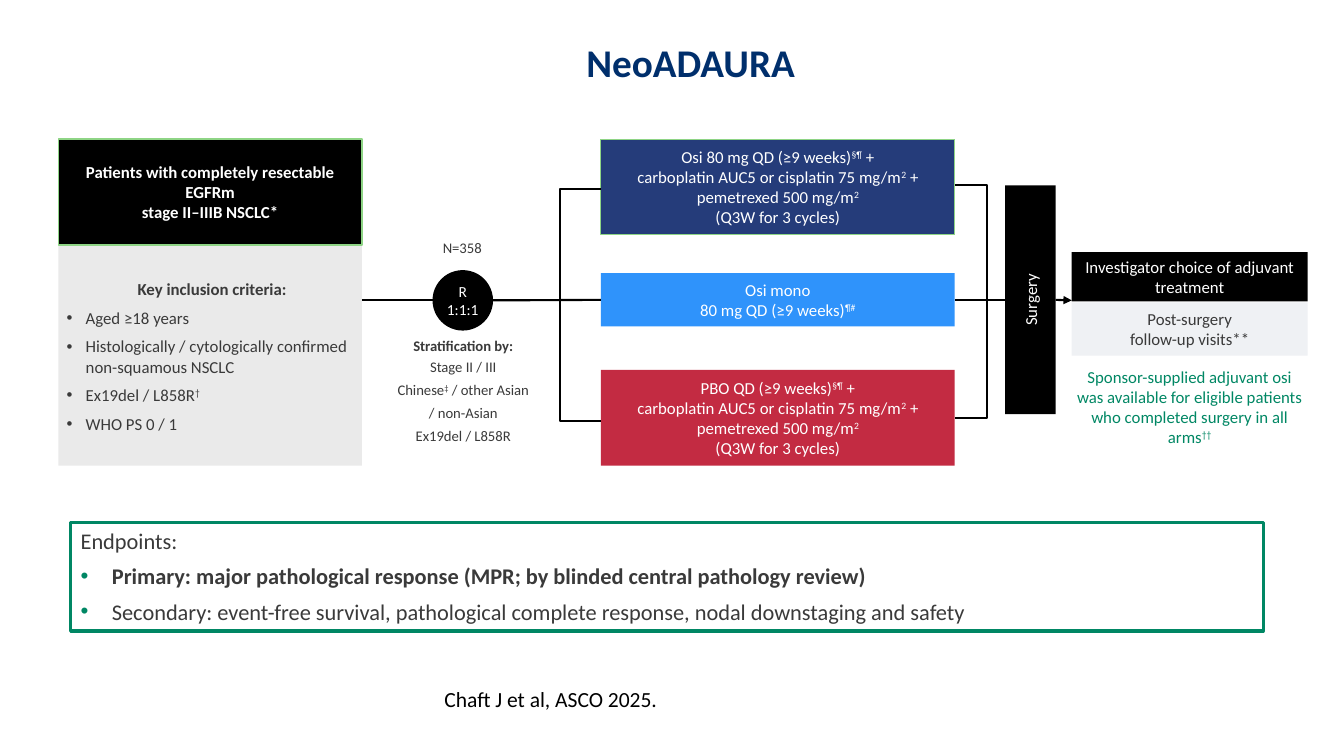
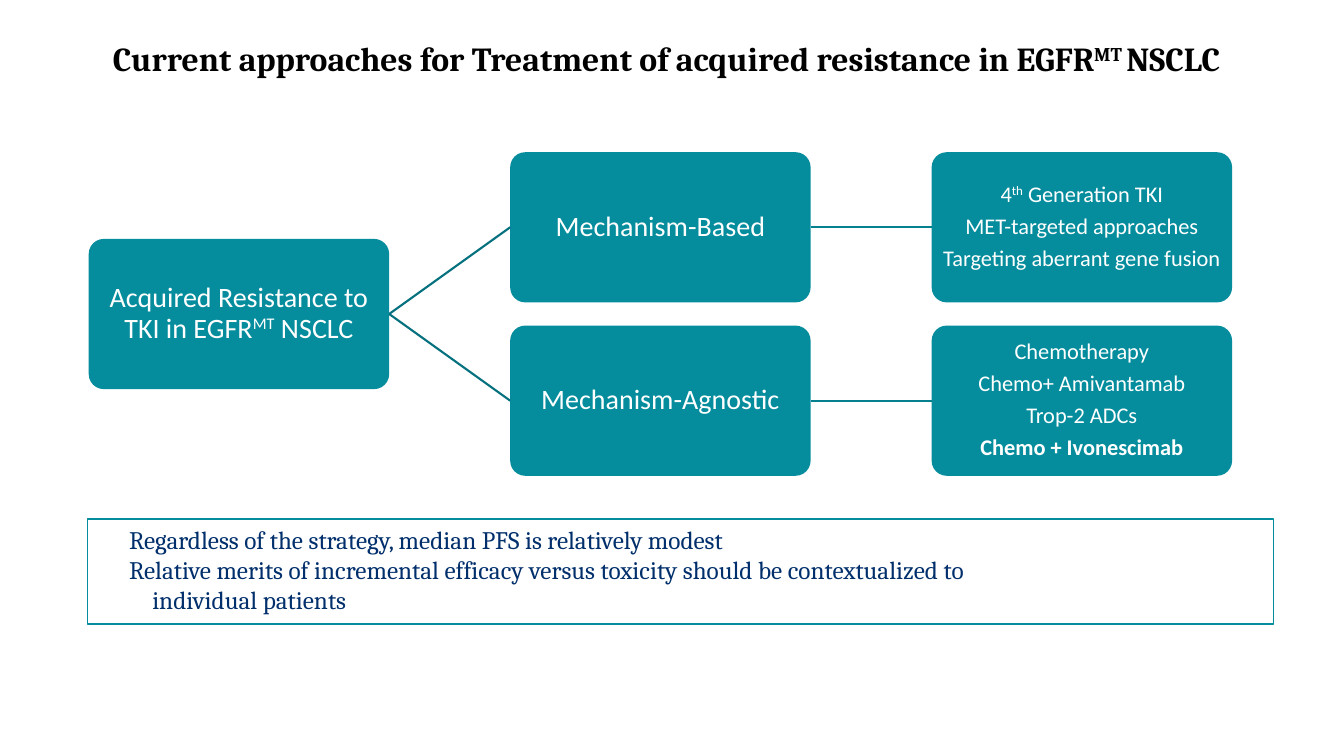
from dataclasses import dataclass

from lxml import etree
from pptx import Presentation
from pptx.dml.color import RGBColor
from pptx.enum.shapes import MSO_CONNECTOR, MSO_SHAPE
from pptx.enum.text import MSO_ANCHOR, MSO_AUTO_SIZE, PP_ALIGN
from pptx.oxml.ns import qn
from pptx.util import Inches, Pt

RECTANGLE = MSO_SHAPE.RECTANGLE
ROUNDED = MSO_SHAPE.ROUNDED_RECTANGLE
OVAL = MSO_SHAPE.OVAL
STRAIGHT = MSO_CONNECTOR.STRAIGHT
ELBOW = MSO_CONNECTOR.ELBOW
TOP, MIDDLE = MSO_ANCHOR.TOP, MSO_ANCHOR.MIDDLE
LEFT, CENTER = PP_ALIGN.LEFT, PP_ALIGN.CENTER
NO_FIT = MSO_AUTO_SIZE.NONE
LEFT_SIDE, RIGHT_SIDE = 1, 3

BLACK, WHITE, GRAY_TEXT = "000000", "FFFFFF", "3A3A3A"
NAVY, GREEN, LIGHT_GREEN = "002F6C", "008764", "8ED485"
TEAL, DARK_TEAL, MID_TEAL = "068D9D", "05717E", "05808E"
DEFAULT_INSETS = (0.1, 0.05, 0.1, 0.05)


def color(value):
    return RGBColor.from_string(value)


@dataclass
class Line:
    text: str
    bold: bool = False
    align: PP_ALIGN = CENTER
    after: float = 0
    margin: float = 0
    hanging: float = 0
    bullet_color: str = ""
    spacing: float = 1.0


@dataclass
class TextStyle:
    size: float = 12
    color: str = WHITE
    font: str = "Calibri"
    anchor: MSO_ANCHOR = MIDDLE
    insets: tuple = DEFAULT_INSETS
    vertical: str = ""


class Deck:
    def __init__(self):
        self.presentation = Presentation()
        self.presentation.slide_width = Inches(13.33)
        self.presentation.slide_height = Inches(7.5)
        self.slide = None

    def new_slide(self):
        layout = self.presentation.slide_layouts[1]
        self.slide = self.presentation.slides.add_slide(layout)

    def fill_text(self, shape, lines, style):
        frame = shape.text_frame
        frame.word_wrap = True
        frame.auto_size = NO_FIT
        frame.vertical_anchor = style.anchor
        left, top, right, bottom = map(Inches, style.insets)
        frame.margin_left, frame.margin_top = left, top
        frame.margin_right, frame.margin_bottom = right, bottom
        if style.vertical:
            frame._txBody.bodyPr.set("vert", style.vertical)
        for index, line in enumerate(lines):
            paragraph = frame.add_paragraph() if index else frame.paragraphs[0]
            self.format_paragraph(paragraph, line)
            for position, part in enumerate(line.text.split("^")):
                self.add_runs(paragraph, part, position % 2, line.bold, style)

    def format_paragraph(self, paragraph, line):
        properties = paragraph._p.get_or_add_pPr()
        properties.set("marL", str(Inches(line.margin)))
        properties.set("indent", str(-Inches(line.hanging)))
        if line.bullet_color:
            holder = etree.SubElement(properties, qn("a:buClr"))
            etree.SubElement(holder, qn("a:srgbClr"), val=line.bullet_color)
            etree.SubElement(properties, qn("a:buFont"), typeface="Arial")
            etree.SubElement(properties, qn("a:buChar"), char="•")
        else:
            etree.SubElement(properties, qn("a:buNone"))
        paragraph.alignment = line.align
        paragraph.line_spacing = line.spacing
        paragraph.space_before = Pt(0)
        paragraph.space_after = Pt(line.after)

    def add_runs(self, paragraph, text, raised, bold, style):
        for index, piece in enumerate(text.split("\n")):
            if index:
                paragraph.add_line_break()
            if not piece:
                continue
            run = paragraph.add_run()
            run.text = piece
            run.font.name = style.font
            run.font.size = Pt(style.size)
            run.font.bold = bold
            run.font.color.rgb = color(style.color)
            if raised:
                run._r.get_or_add_rPr().set("baseline", "30000")

    def placeholder(self, index, box, lines, style):
        shape = self.slide.placeholders[index]
        shape.left, shape.top, shape.width, shape.height = map(Inches, box)
        self.fill_text(shape, lines, style)
        return shape

    def title(self, box, text, style):
        self.placeholder(0, box, [Line(text, bold=True, spacing=0.9)], style)

    def framed_list(self, box, lines, style, border, width):
        shape = self.placeholder(1, box, lines, style)
        shape.line.color.rgb = color(border)
        shape.line.width = Pt(width)

    def text(self, box, lines, style):
        shape = self.slide.shapes.add_textbox(*map(Inches, box))
        self.fill_text(shape, lines, style)

    def box(self, box, fill, lines, style=TextStyle(), kind=RECTANGLE,
            border=None, width=0.75, opacity=None):
        shape = self.slide.shapes.add_shape(kind, *map(Inches, box))
        shape.shadow.inherit = False
        shape.fill.solid()
        shape.fill.fore_color.rgb = color(fill)
        if opacity is not None:
            fill_color = shape._element.spPr.find(".//" + qn("a:srgbClr"))
            etree.SubElement(fill_color, qn("a:alpha"), val=str(opacity * 1000))
        if border:
            shape.line.color.rgb = color(border)
            shape.line.width = Pt(width)
        else:
            shape.line.fill.background()
        if kind == ROUNDED:
            shape.adjustments[0] = 0.1
        self.fill_text(shape, lines, style)
        return shape

    def connector(self, start=(0, 0), end=(0, 0), source=None, target=None,
                  line_color=BLACK, bend_x=None, arrow=False):
        kind = STRAIGHT if bend_x is None else ELBOW
        connector = self.slide.shapes.add_connector(
            kind, *map(Inches, (*start, *end)))
        if source is not None:
            connector.begin_connect(source, RIGHT_SIDE)
        if target is not None:
            connector.end_connect(target, LEFT_SIDE)
        connector.line.color.rgb = color(line_color)
        connector.line.width = Pt(1.5)
        properties = connector._element.spPr
        if bend_x is not None:
            share = round((bend_x - start[0]) / (end[0] - start[0]) * 100000)
            guides = properties.find(".//" + qn("a:avLst"))
            etree.SubElement(guides, qn("a:gd"), name="adj1", fmla=f"val {share}")
        if arrow:
            etree.SubElement(properties.find(qn("a:ln")), qn("a:tailEnd"),
                             type="triangle")
        etree.SubElement(properties, qn("a:effectLst"))


def trial_slide(deck):
    deck.new_slide()
    deck.title((0.85, 0.19, 12, 0.91), "NeoADAURA", TextStyle(28, NAVY))
    gray = TextStyle(12, GRAY_TEXT)

    criteria = ["Aged ≥18 years",
                "Histologically / cytologically confirmed non-squamous NSCLC",
                "Ex19del / L858R^†^", "WHO PS 0 / 1"]
    deck.box((0.58, 2.41, 3.01, 2.21), "999999",
             [Line("Key inclusion criteria:", bold=True, after=6)]
             + [Line(item, align=LEFT, after=6, margin=0.19, hanging=0.19,
                     bullet_color=GRAY_TEXT) for item in criteria],
             TextStyle(12, GRAY_TEXT, insets=(0.08, 0.04, 0.04, 0)), opacity=20)
    deck.box((0.58, 1.38, 3.01, 1.05), BLACK,
             [Line("Patients with completely resectable EGFRm\n"
                   "stage II–IIIB NSCLC*", bold=True)],
             border=LIGHT_GREEN, width=1)

    deck.text((4.12, 2.23, 0.93, 0.46), [Line("N=358")],
              TextStyle(10.5, GRAY_TEXT, insets=(0.08, 0, 0.08, 0)))
    deck.box((4.29, 2.68, 0.6, 0.6), BLACK, [Line("R\n1:1:1")],
             TextStyle(11, insets=(0, 0, 0, 0)), kind=OVAL)
    factors = ["Stage II / III", "Chinese^‡^ / other Asian", "/ non-Asian",
               "Ex19del / L858R"]
    deck.text((3.59, 3.31, 1.97, 1.14),
              [Line("Stratification by:", bold=True, after=2)]
              + [Line(factor, after=4) for factor in factors],
              TextStyle(10.5, GRAY_TEXT, insets=(0.08, 0.08, 0.04, 0.08)))

    chemotherapy = (" +\ncarboplatin AUC5 or cisplatin 75 mg/m^2^ + "
                    "pemetrexed 500 mg/m^2^\n(Q3W for 3 cycles)")
    arms = [
        (1.38, 0.95, "253C7A", LIGHT_GREEN,
         "Osi 80 mg QD (≥9 weeks)^§¶^" + chemotherapy),
        (2.71, 0.53, "2F93FB", None, "Osi mono\n80 mg QD (≥9 weeks)^¶#^"),
        (3.67, 0.95, "C32B42", None, "PBO QD (≥9 weeks)^§¶^" + chemotherapy),
    ]
    _, mono, _ = [deck.box((5.96, top, 3.51, height), fill, [Line(text)],
                           border=border)
                  for top, height, fill, border, text in arms]
    surgery = deck.box((9.97, 1.84, 0.5, 2.27), BLACK, [Line("Surgery")],
                       TextStyle(vertical="vert270"))

    axis = 2.98
    deck.connector((3.59, axis), (4.29, axis))
    deck.connector((4.89, axis), target=mono)
    deck.connector(source=mono, target=surgery)
    for entry, leave in ((1.88, 1.84), (4.18, 4.15)):
        deck.connector((4.89, axis), (5.96, entry), bend_x=5.55)
        deck.connector((9.47, leave), (9.97, axis), bend_x=9.79)

    deck.box((10.63, 3, 2.34, 0.53), "EFF1F4",
             [Line("Post-surgery\nfollow-up visits**")], gray)
    deck.box((10.63, 2.5, 2.34, 0.49), BLACK,
             [Line("Investigator choice of adjuvant treatment")])
    deck.connector(end=(10.63, axis), source=surgery, arrow=True)
    deck.text((10.55, 3.56, 2.5, 0.95),
              [Line("Sponsor-supplied adjuvant osi was available for eligible "
                    "patients who completed surgery in all arms^††^")],
              TextStyle(12, GREEN))

    bullet = dict(align=LEFT, after=6, margin=0.31, hanging=0.31,
                  bullet_color=GREEN)
    deck.framed_list(
        (0.7, 5.18, 11.83, 1.08),
        [Line("Endpoints:", align=LEFT, after=6),
         Line("Primary: major pathological response (MPR; by blinded central "
              "pathology review)", bold=True, **bullet),
         Line("Secondary: event-free survival, pathological complete response, "
              "nodal downstaging and safety", **bullet)],
        TextStyle(16, GRAY_TEXT, anchor=TOP), GREEN, 2.25)
    deck.text((4.31, 6.81, 6.4, 0.31),
              [Line("Chaft J et al, ASCO 2025.", align=LEFT, spacing=0.8)],
              TextStyle(15.4, BLACK, anchor=TOP))


def resistance_slide(deck):
    deck.new_slide()
    deck.title((0, 0.23, 13.22, 0.74),
               "Current approaches for Treatment of acquired resistance in "
               "EGFR^MT ^NSCLC", TextStyle(24, BLACK, "Cambria"))

    def node(column, top, lines, size=20):
        return deck.box((0.88 + 4.18 * column, top, 2.98, 1.49), TEAL,
                        [Line(text, bold=bold, after=size * 0.35, spacing=0.9)
                         for text, bold in lines],
                        TextStyle(size, insets=(0.05,) * 4), kind=ROUNDED)

    root = node(0, 2.37, [("Acquired Resistance to TKI in EGFR^MT^ NSCLC", False)])
    branches = [
        (1.51, "Mechanism-Based",
         [("4^th^ Generation TKI", False), ("MET-targeted approaches", False),
          ("Targeting aberrant gene fusion", False)]),
        (3.23, "Mechanism-Agnostic",
         [("Chemotherapy", False), ("Chemo+ Amivantamab", False),
          ("Trop-2 ADCs", False), ("Chemo + Ivonescimab", True)]),
    ]
    for top, name, options in branches:
        strategy = node(1, top, [(name, False)])
        treatments = node(2, top, options, size=16)
        deck.connector(source=root, target=strategy, line_color=DARK_TEAL)
        deck.connector(source=strategy, target=treatments, line_color=MID_TEAL)

    deck.framed_list(
        (0.87, 5.15, 11.76, 1.04),
        [Line("Regardless of the strategy, median PFS is relatively modest",
              align=LEFT, margin=0.31),
         Line("Relative merits of incremental efficacy versus toxicity should be "
              "contextualized to\nindividual patients",
              align=LEFT, margin=0.54, hanging=0.23)],
        TextStyle(18, NAVY, "Cambria", anchor=TOP), TEAL, 1)


def main():
    deck = Deck()
    trial_slide(deck)
    resistance_slide(deck)
    deck.presentation.save("out.pptx")


if __name__ == "__main__":
    main()
